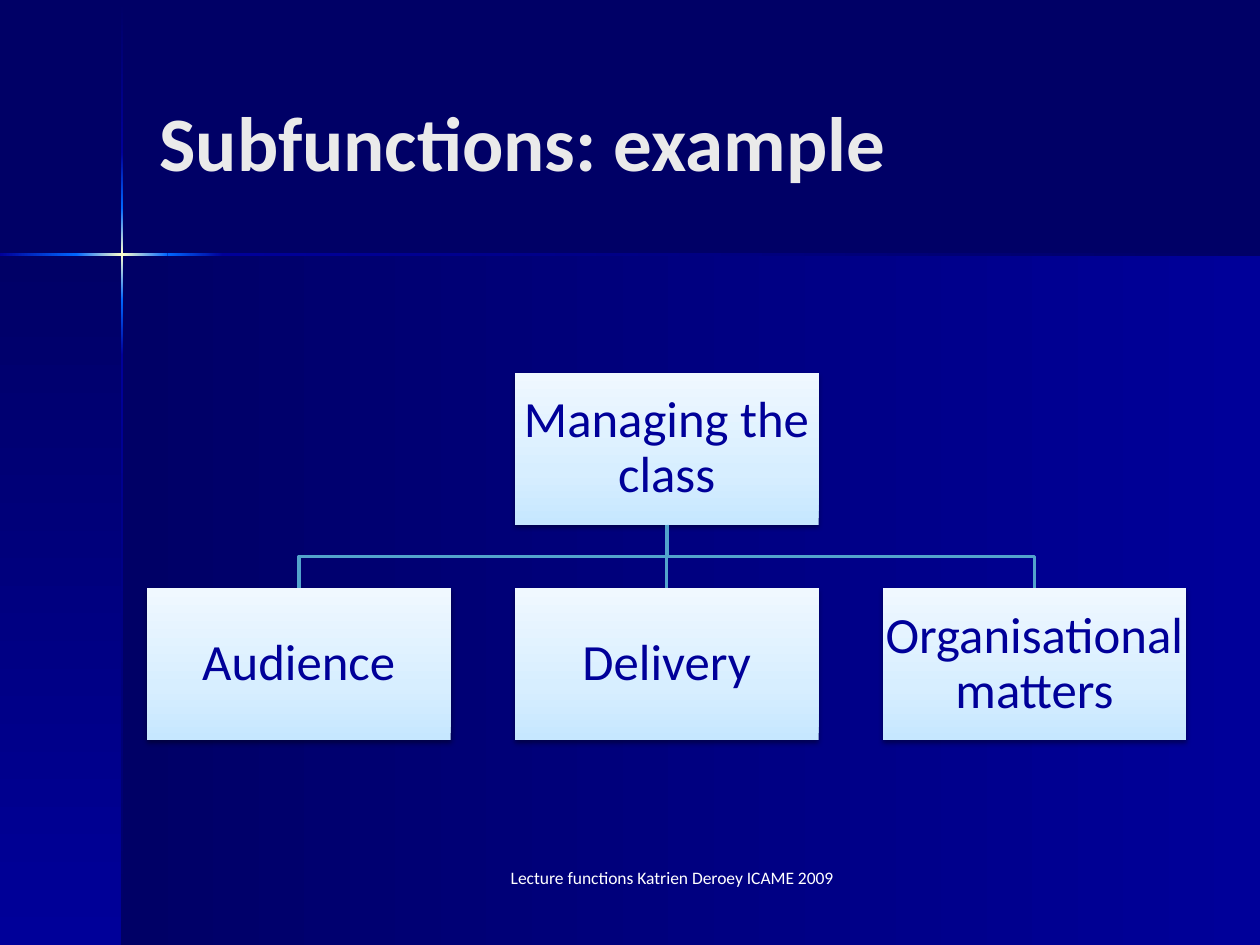
from itertools import pairwise

from lxml import etree
from pptx import Presentation
from pptx.dml.color import RGBColor
from pptx.enum import shapes, text
from pptx.oxml.ns import qn
from pptx.util import Pt

NAVY = RGBColor(0x00, 0x00, 0x66)
BLUE = RGBColor(0x00, 0x00, 0x99)
BRIGHT = RGBColor(0x00, 0x66, 0xFF)
CREAM = RGBColor(0xFF, 0xFF, 0xCC)
TITLE_GREY = RGBColor(0xEA, 0xEA, 0xEA)
WHITE = RGBColor(0xFF, 0xFF, 0xFF)
BLACK = RGBColor(0x00, 0x00, 0x00)
LINE_TEAL = RGBColor(0x52, 0xA3, 0xCC)
NODE_STOPS = [
    (0, RGBColor(0xC6, 0xE7, 0xFF)),
    (35, RGBColor(0xD7, 0xEE, 0xFF)),
    (100, RGBColor(0xF0, 0xF8, 0xFF)),
]

FONT = "Calibri"
RIGHTWARD, UPWARD, DOWNWARD = 0, 90, 270


def set_gradient(shape, stops, angle):
    shape.fill.gradient()
    shape.fill.gradient_angle = angle
    stop_list = next(shape._element.spPr.iter(qn("a:gsLst")))
    for stop in list(stop_list):
        stop_list.remove(stop)
    for position, color in stops:
        stop = etree.SubElement(stop_list, qn("a:gs"), pos=str(position * 1000))
        etree.SubElement(stop, qn("a:srgbClr"), val=str(color))


def add_gradient_box(slide, box, stops, angle):
    shape = slide.shapes.add_shape(
        shapes.MSO_SHAPE.RECTANGLE, *[Pt(length) for length in box]
    )
    shape.shadow.inherit = False
    shape.line.fill.background()
    set_gradient(shape, stops, angle)
    return shape


def add_soft_shadow(shape):
    effects = shape._element.spPr.find(qn("a:effectLst"))
    shadow = etree.SubElement(
        effects, qn("a:outerShdw"), blurRad=str(Pt(3.1)), dist=str(Pt(1.6)),
        dir="5400000", rotWithShape="0",
    )
    color = etree.SubElement(shadow, qn("a:srgbClr"), val=str(BLACK))
    etree.SubElement(color, qn("a:alpha"), val="38000")


def add_backdrop(slide, box):
    left, top, width, height = box
    cross_x, cross_y, thickness = left + 69.8, top + 145.4, 1.5
    right, bottom = left + width, top + height
    panel = [(0, NAVY), (100, BLUE)]
    add_gradient_box(
        slide, (cross_x, cross_y, right - cross_x, bottom - cross_y), panel, RIGHTWARD
    )
    add_gradient_box(
        slide, (left, cross_y, cross_x - left, bottom - cross_y), panel, DOWNWARD
    )

    fades = [
        [(0, NAVY), (100, BLUE)],
        [(0, BLUE), (100, BRIGHT)],
        [(0, BRIGHT), (50, CREAM), (100, BRIGHT)],
        [(0, BRIGHT), (100, BLUE)],
        [(0, BLUE), (100, NAVY)],
    ]
    vertical_stops = [top + 0.7, top + 87.1, top + 118.8, top + 171.4, top + 203, bottom]
    for (start, end), fade in zip(pairwise(vertical_stops), fades):
        stripe = (cross_x - thickness / 2, start, thickness, end - start)
        add_gradient_box(slide, stripe, fade, DOWNWARD)
    horizontal_stops = [left, left + 43.5, left + 95.8, left + 127.4, right]
    for (start, end), fade in zip(pairwise(horizontal_stops), fades[1:]):
        stripe = (start, cross_y - thickness / 2, end - start, thickness)
        add_gradient_box(slide, stripe, fade, RIGHTWARD)


def write_text(shape, wording, size, color, alignment):
    frame = shape.text_frame
    frame.text = wording
    frame.word_wrap = True
    frame.auto_size = text.MSO_AUTO_SIZE.NONE
    paragraph = frame.paragraphs[0]
    paragraph.alignment = alignment
    paragraph.font.name = FONT
    paragraph.font.size = Pt(size)
    paragraph.font.color.rgb = color
    return paragraph


def place_title(slide, box, wording):
    title = slide.shapes.title
    title.left, title.top, title.width, title.height = [Pt(length) for length in box]
    paragraph = write_text(title, wording, 44, TITLE_GREY, text.PP_ALIGN.LEFT)
    paragraph.font.bold = True
    title.text_frame.vertical_anchor = text.MSO_ANCHOR.MIDDLE


def add_node(slide, box, label):
    node = add_gradient_box(slide, box, NODE_STOPS, UPWARD)
    add_soft_shadow(node)
    paragraph = write_text(node, label, 29, BLUE, text.PP_ALIGN.CENTER)
    paragraph.line_spacing = 0.9
    frame = node.text_frame
    frame.vertical_anchor = text.MSO_ANCHOR.MIDDLE
    frame.margin_left = frame.margin_right = Pt(1.5)
    frame.margin_top = frame.margin_bottom = Pt(1.5)
    return node


def style_line(shape):
    shape.line.color.rgb = LINE_TEAL
    shape.line.width = Pt(2)


def connect_nodes(slide, parent, child):
    start_x = parent.left + parent.width // 2
    start_y = parent.top + parent.height
    end_x = child.left + child.width // 2
    if start_x == end_x:
        link = slide.shapes.add_connector(
            shapes.MSO_CONNECTOR.STRAIGHT, start_x, start_y, end_x, child.top
        )
        link.begin_connect(parent, 2)
        link.end_connect(child, 0)
        style_line(link)
        etree.SubElement(link._element.spPr, qn("a:effectLst"))
        return
    middle_y = (start_y + child.top) // 2
    builder = slide.shapes.build_freeform(start_x, start_y)
    builder.add_line_segments(
        [(start_x, middle_y), (end_x, middle_y), (end_x, child.top)], close=False
    )
    link = builder.convert_to_shape()
    link.fill.background()
    link.shadow.inherit = False
    style_line(link)


def add_hierarchy(slide, box, root_label, child_labels):
    left, top, width, height = box
    node_width, node_height = 173.6, 86.8
    step = (width - node_width) / (len(child_labels) - 1)
    root_left = left + (width - node_width) / 2
    root = add_node(slide, (root_left, top, node_width, node_height), root_label)
    child_top = top + height - node_height
    for index, label in enumerate(child_labels):
        child_box = (left + index * step, child_top, node_width, node_height)
        connect_nodes(slide, root, add_node(slide, child_box, label))


def add_footer(slide, box, wording):
    footer = slide.shapes.add_textbox(*[Pt(length) for length in box])
    write_text(footer, wording, 10, WHITE, text.PP_ALIGN.CENTER)


def main():
    presentation = Presentation()
    presentation.slide_width, presentation.slide_height = Pt(720), Pt(540)
    slide = presentation.slides.add_slide(presentation.slide_layouts[5])
    slide.background.fill.solid()
    slide.background.fill.fore_color.rgb = NAVY

    add_backdrop(slide, (0, 0, 720, 540))
    title_element = slide.shapes.title._element
    title_element.getparent().append(title_element)
    place_title(slide, (84, 24, 594, 113), "Subfunctions: example")
    add_hierarchy(
        slide, (84, 213, 594, 210), "Managing the class",
        ["Audience", "Delivery", "Organisational matters"],
    )
    add_footer(slide, (270, 492, 228, 36), "Lecture functions Katrien Deroey ICAME 2009")
    presentation.save("out.pptx")


if __name__ == "__main__":
    main()
